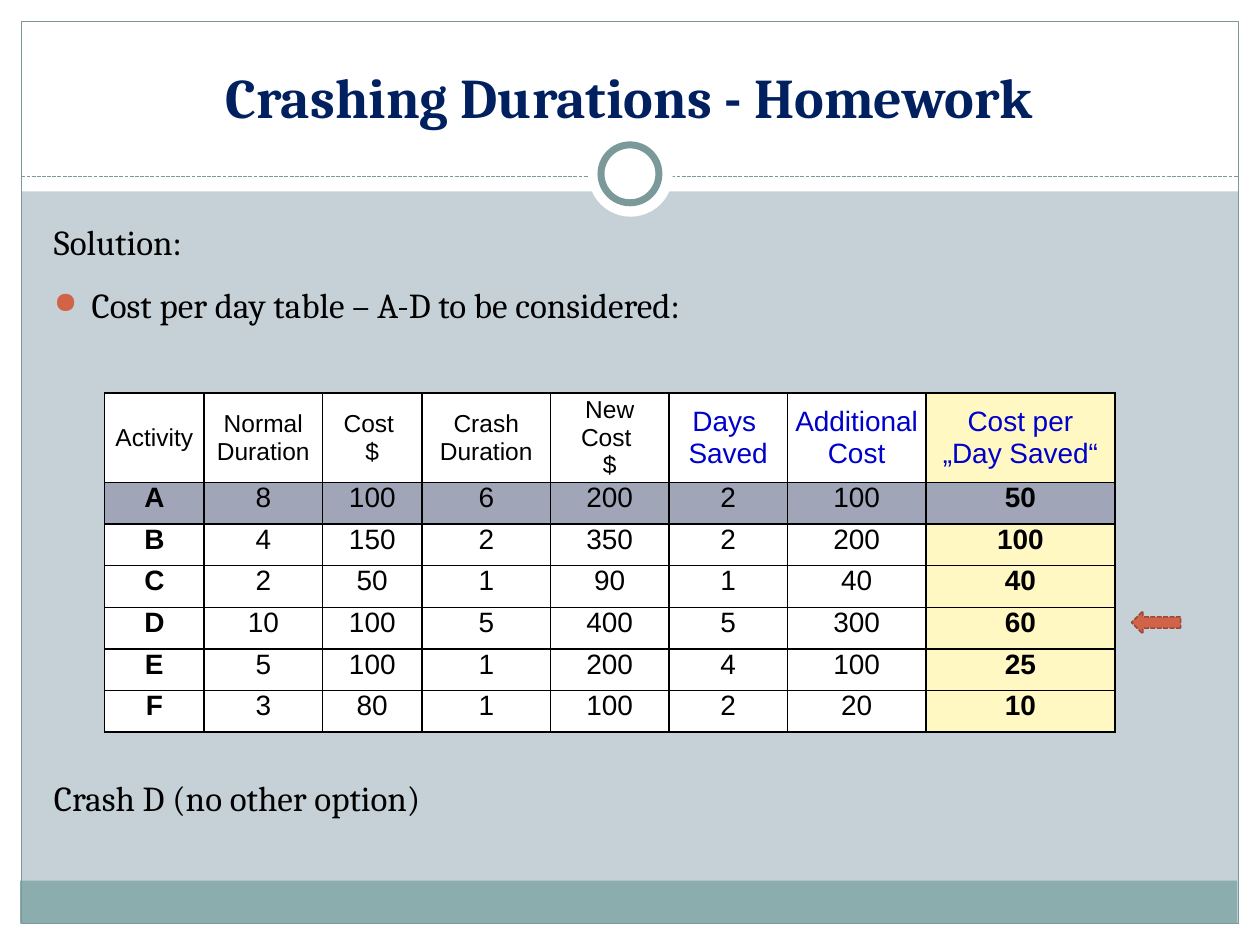
"""Build the crashing durations homework slide with its cost per day table."""
import pptx
import pptx.dml.color
import pptx.enum.dml
import pptx.enum.shapes
import pptx.enum.text
import pptx.oxml
import pptx.oxml.ns
import pptx.util

Inches = pptx.util.Inches
Pt = pptx.util.Pt
RGBColor = pptx.dml.color.RGBColor
Shape = pptx.enum.shapes.MSO_SHAPE
Dash = pptx.enum.dml.MSO_LINE
Align = pptx.enum.text.PP_ALIGN
Anchor = pptx.enum.text.MSO_ANCHOR

WHITE = RGBColor(0xFF, 0xFF, 0xFF)
BLACK = RGBColor(0, 0, 0)
MIST = RGBColor(0xC5, 0xD1, 0xD7)
TEAL = RGBColor(0x8C, 0xAD, 0xAE)
SLATE = RGBColor(0x7C, 0x99, 0x9A)
NAVY = RGBColor(0x00, 0x20, 0x60)
BLUE = RGBColor(0x00, 0x00, 0xCC)
CREAM = RGBColor(0xFF, 0xF8, 0xC2)
CHOSEN = RGBColor(0xA0, 0xA5, 0xB8)
RUST = RGBColor(0xD1, 0x63, 0x49)
DARK_RUST = RGBColor(0x9B, 0x49, 0x36)

MARGINS = [(0, 7.33, 10, 0.17), (0, 0, 10, 1.52), (0, 0, 0.17, 7.5), (9.83, 0, 0.17, 7.5)]
COLUMN_WIDTHS = [0.79, 0.94, 0.79, 1.02, 0.94, 0.94, 1.1, 1.5]
HEADINGS = ["Activity", "Normal Duration", "Cost \n$", "Crash Duration", "New Cost \n$",
            "Days \nSaved", "Additional \nCost", "Cost per\n„Day Saved“"]
FIRST_DERIVED = 5
ACTIVITIES = [
    ("A", 8, 100, 6, 200, 2, 100, 50),
    ("B", 4, 150, 2, 350, 2, 200, 100),
    ("C", 2, 50, 1, 90, 1, 40, 40),
    ("D", 10, 100, 5, 400, 5, 300, 60),
    ("E", 5, 100, 1, 200, 4, 100, 25),
    ("F", 3, 80, 1, 100, 2, 20, 10),
]


def apply_format(target, values):
    """Set each named attribute on the target."""
    for name, value in values.items():
        setattr(target, name, value)


def format_font(font, color, **values):
    """Give a font its colour and other values."""
    apply_format(font, values)
    font.color.rgb = color


def format_line(line, color, width, dash=None):
    """Give a line its colour, width and dash."""
    line.color.rgb = color
    apply_format(line, {"width": Pt(width), "dash_style": dash})


def add_figure(slide, kind, box, fill=None, line=None):
    """Add a preset shape with an optional fill and line."""
    figure = slide.shapes.add_shape(kind, *map(Inches, box))
    figure.shadow.inherit = False
    if fill is None:
        figure.fill.background()
    else:
        figure.fill.solid()
        figure.fill.fore_color.rgb = fill
    if line is None:
        figure.line.fill.background()
    else:
        format_line(figure.line, *line)
    return figure


def add_divider(slide):
    """Add the dashed rule below the title."""
    divider = slide.shapes.add_connector(
        pptx.enum.shapes.MSO_CONNECTOR.STRAIGHT,
        Inches(0.17), Inches(1.4), Inches(9.83), Inches(1.4))
    format_line(divider.line, SLATE, 0.75, Dash.SQUARE_DOT)
    properties = divider._element.spPr
    properties.append(pptx.oxml.parse_xml(f'<a:effectLst {pptx.oxml.ns.nsdecls("a")}/>'))


def add_frame(slide):
    """Add the border, bands and ring around the content."""
    for margin in MARGINS:
        add_figure(slide, Shape.RECTANGLE, margin, WHITE)
    add_figure(slide, Shape.RECTANGLE, (0.16, 6.99, 9.66, 0.34), TEAL)
    add_figure(slide, Shape.RECTANGLE, (0.17, 0.17, 9.66, 7.16), line=(SLATE, 0.75))
    add_divider(slide)
    add_figure(slide, Shape.OVAL, (4.67, 1.05, 0.67, 0.67), WHITE)
    add_figure(slide, Shape.OVAL, (4.77, 1.15, 0.46, 0.46), WHITE, (SLATE, 4))


def add_text(slide, box, anchor=Anchor.TOP):
    """Add a wrapping text box and return its frame."""
    frame = slide.shapes.add_textbox(*map(Inches, box)).text_frame
    apply_format(frame, {"word_wrap": True, "vertical_anchor": anchor})
    return frame


def add_bullet(paragraph):
    """Give a paragraph a hanging round bullet."""
    properties = paragraph._p.get_or_add_pPr()
    properties.set("marL", str(Inches(0.3)))
    properties.set("indent", str(Inches(-0.3)))
    namespace = pptx.oxml.ns.nsdecls("a")
    for markup in (f'<a:buClr {namespace}><a:srgbClr val="{RUST}"/></a:buClr>',
                   f'<a:buSzPct {namespace} val="85000"/>',
                   f'<a:buChar {namespace} char="●"/>'):
        properties.append(pptx.oxml.parse_xml(markup))


def add_title(slide):
    """Add the slide title."""
    title = add_text(slide, (0.33, 0.25, 9.33, 0.83), Anchor.BOTTOM).paragraphs[0]
    title.text = "Crashing Durations - Homework"
    title.alignment = Align.CENTER
    format_font(title.font, NAVY, name="Cambria", size=Pt(32), bold=True)


def add_solution(slide):
    """Add the solution text above and below the table."""
    frame = add_text(slide, (0.33, 1.7, 9.36, 5))
    frame.text = "Solution:\nCost per day table – A-D to be considered:\nCrash D (no other option)"
    solution, considered, conclusion = frame.paragraphs
    for paragraph in frame.paragraphs:
        paragraph.space_after = Pt(12)
        format_font(paragraph.font, BLACK, name="Cambria", size=Pt(20), bold=paragraph is solution)
    conclusion.space_before = Pt(246)
    add_bullet(considered)


def add_borders(cell):
    """Draw black borders on all sides of a cell."""
    properties = cell._tc.get_or_add_tcPr()
    for position, side in enumerate(("lnL", "lnR", "lnT", "lnB")):
        properties.insert(position, pptx.oxml.parse_xml(
            f'<a:{side} {pptx.oxml.ns.nsdecls("a")} w="{Pt(1)}">'
            f'<a:solidFill><a:srgbClr val="{BLACK}"/></a:solidFill></a:{side}>'))


def fill_cell(cell, text, fill, anchor, color, size, bold):
    """Write and format one table cell."""
    cell.text = str(text)
    apply_format(cell, {"margin_left": Inches(0.05), "margin_right": Inches(0.05),
                        "margin_top": 0, "margin_bottom": 0, "vertical_anchor": anchor})
    cell.fill.solid()
    cell.fill.fore_color.rgb = fill
    for paragraph in cell.text_frame.paragraphs:
        paragraph.alignment = Align.CENTER
        format_font(paragraph.font, color, name="Arial", size=Pt(size), bold=bold)
    add_borders(cell)


def add_cost_table(slide):
    """Add the table of crash costs per activity."""
    last = len(HEADINGS) - 1
    table = slide.shapes.add_table(
        len(ACTIVITIES) + 1, len(HEADINGS),
        Inches(0.83), Inches(3.12), Inches(8.03), Inches(2.72)).table
    for column, width in zip(table.columns, COLUMN_WIDTHS):
        column.width = Inches(width)
    for index, row in enumerate(table.rows):
        row.height = Inches(0.33 if index else 0.71)
    for column, heading in enumerate(HEADINGS):
        derived = column >= FIRST_DERIVED
        fill_cell(table.cell(0, column), heading, CREAM if column == last else WHITE,
                  Anchor.MIDDLE, BLUE if derived else BLACK, 16 if derived else 14, False)
    for row, activity in enumerate(ACTIVITIES, 1):
        for column, value in enumerate(activity):
            fill = CHOSEN if row == 1 else CREAM if column == last else WHITE
            fill_cell(table.cell(row, column), value, fill, Anchor.TOP, BLACK, 16,
                      column in (0, last))


def main():
    """Build and save the slide."""
    deck = pptx.Presentation()
    apply_format(deck, {"slide_width": Inches(10), "slide_height": Inches(7.5)})
    slide = deck.slides.add_slide(deck.slide_layouts[6])
    slide.background.fill.solid()
    slide.background.fill.fore_color.rgb = MIST
    add_frame(slide)
    add_title(slide)
    add_solution(slide)
    add_cost_table(slide)
    pointer = add_figure(slide, Shape.RIGHT_ARROW, (8.98, 4.85, 0.39, 0.18),
                         RUST, (DARK_RUST, 0.9, Dash.SQUARE_DOT))
    pointer.rotation = 180
    deck.save("out.pptx")


if __name__ == "__main__":
    main()
